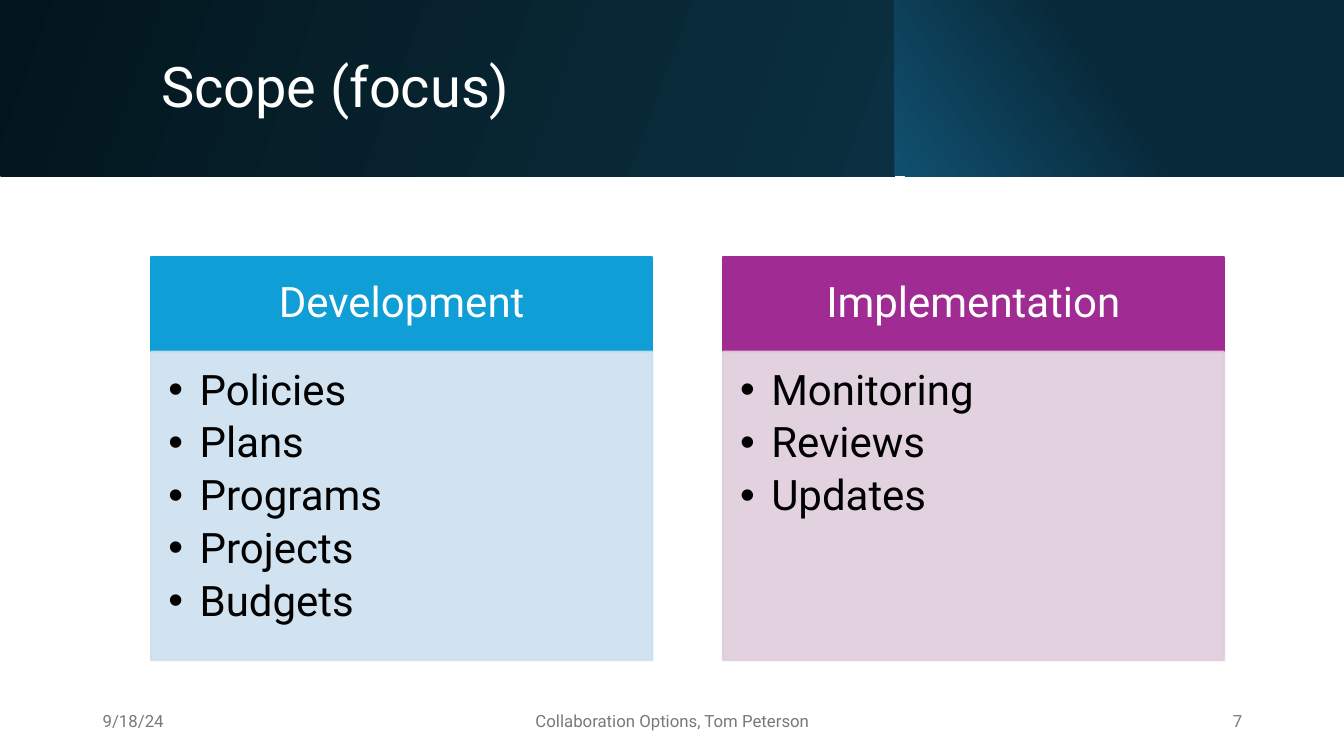
from pptx import Presentation
from pptx.dml.color import RGBColor
from pptx.enum.shapes import MSO_SHAPE
from pptx.enum.text import MSO_ANCHOR, PP_ALIGN
from pptx.oxml.ns import qn
from pptx.util import Inches, Pt
from lxml.etree import SubElement

TITLE = "Scope (focus)"
COLUMNS = [
    ("Development", ["Policies", "Plans", "Programs", "Projects", "Budgets"],
     "0F9ED5", "CCDFEF"),
    ("Implementation", ["Monitoring", "Reviews", "Updates"],
     "A02B93", "DFCDDC"),
]
FOOTER = [
    ("9/18/24", 0.92, 3, PP_ALIGN.LEFT),
    ("Collaboration Options, Tom Peterson", 4.42, 4.5, PP_ALIGN.CENTER),
    ("7", 9.42, 3, PP_ALIGN.RIGHT),
]
THEME = {
    "font": "Roboto", "light": "FFFFFF", "dark": "000000", "muted": "797979",
    "title": 40, "body": 30, "footer": 12,
    "band_left": ("03151C", "0B3041"), "band_right": ("10506F", "08293A"),
}
W, H = 13.33, 7.5
BAND_H, BAND_SPLIT = 1.75, 8.87
LEFT, TOP, COL_W, GAP = 1.5, 2.55, 4.97, 0.7
HEAD_H, BODY_H = 0.94, 3.06
INDENT = 0.31

prs = Presentation()
prs.slide_width, prs.slide_height = Inches(W), Inches(H)
s = prs.slides.add_slide(prs.slide_layouts[6])


def rect(x, y, w, h):
    sp = s.shapes.add_shape(MSO_SHAPE.RECTANGLE, *map(Inches, (x, y, w, h)))
    sp.shadow.inherit = False
    return sp


def gradient_band(x, w, colors, angle, end):
    sp = rect(x, 0, w, BAND_H)
    sp.line.fill.background()
    sp.fill.gradient()
    sp.fill.gradient_angle = angle
    for stop, color, pos in zip(sp.fill.gradient_stops, colors, (0, end)):
        stop.color.rgb = RGBColor.from_string(color)
        stop.position = pos


def panel(x, y, w, h, color, alpha=100):
    sp = rect(x, y, w, h)
    sp.fill.solid()
    sp.line.width = Pt(1.5)
    for fill in (sp.fill, sp.line.fill):
        fill.solid()
        fill.fore_color.rgb = RGBColor.from_string(color)
    if alpha < 100:
        for clr in sp.element.spPr.iter(qn("a:srgbClr")):
            SubElement(clr, qn("a:alpha"), val=str(alpha * 1000))
    return sp


def write(sp, lines, size, color, align=PP_ALIGN.LEFT, anchor=MSO_ANCHOR.MIDDLE,
          insets=(0.1, 0.05, 0.1, 0.05), spacing=None, bullets=False):
    tf = sp.text_frame
    tf.word_wrap = True
    tf.vertical_anchor = anchor
    tf.margin_left, tf.margin_top, tf.margin_right, tf.margin_bottom = map(Inches, insets)
    tf.text = "\n".join(lines)
    for p in tf.paragraphs:
        p.alignment = align
        p.line_spacing = spacing
        if bullets:
            p.space_after = Pt(5.3)
            pPr = p._p.get_or_add_pPr()
            pPr.set("marL", str(Inches(INDENT)))
            pPr.set("indent", str(-Inches(INDENT)))
            SubElement(pPr, qn("a:buFont"), typeface="Arial")
            SubElement(pPr, qn("a:buChar"), char="•")
        for r in p.runs:
            r.font.name = THEME["font"]
            r.font.size = Pt(size)
            r.font.color.rgb = RGBColor.from_string(color)


def text_box(x, y, w, h, text, size, color, **style):
    sp = s.shapes.add_textbox(*map(Inches, (x, y, w, h)))
    write(sp, [text], size, color, **style)


gradient_band(0, BAND_SPLIT, THEME["band_left"], 340, 1)
gradient_band(BAND_SPLIT, W - BAND_SPLIT, THEME["band_right"], 35, 0.5)
text_box(LEFT, 0.32, 10.82, 1.13, TITLE, THEME["title"], THEME["light"], spacing=0.9)

for i, (heading, items, strong, pale) in enumerate(COLUMNS):
    x = LEFT + i * (COL_W + GAP)
    head = panel(x, TOP, COL_W, HEAD_H, strong)
    write(head, [heading], THEME["body"], THEME["light"], PP_ALIGN.CENTER,
          insets=(0.23, 0.13, 0.23, 0.13), spacing=0.9)
    body = panel(x, TOP + HEAD_H, COL_W, BODY_H, pale, alpha=90)
    write(body, items, THEME["body"], THEME["dark"], anchor=MSO_ANCHOR.TOP,
          insets=(0.17, 0.17, 0.23, 0.26), spacing=0.9, bullets=True)

for text, x, w, align in FOOTER:
    text_box(x, 6.95, w, 0.4, text, THEME["footer"], THEME["muted"], align=align)

prs.save("out.pptx")
